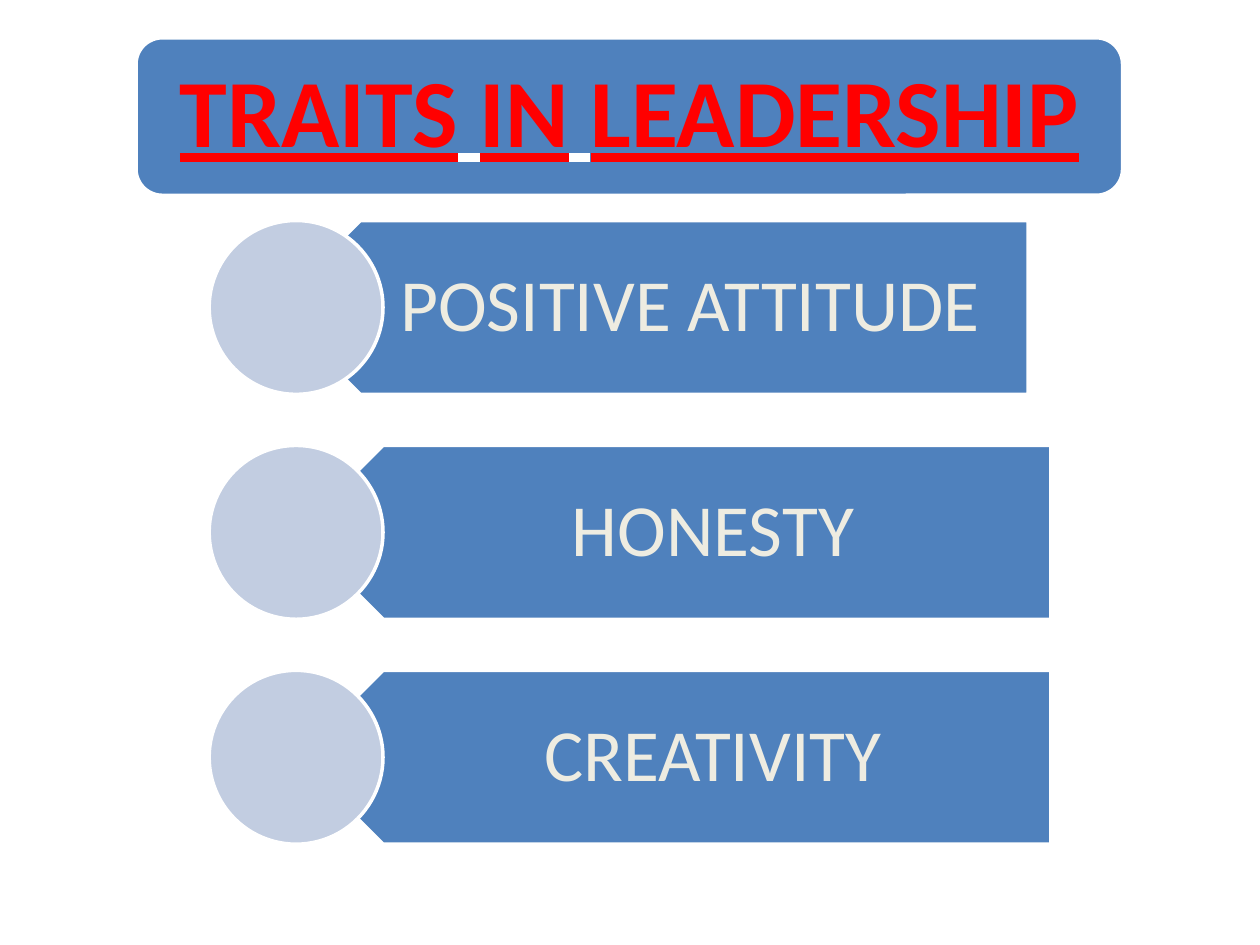
from dataclasses import dataclass

from pptx import Presentation
from pptx.dml.color import RGBColor as RGB
from pptx.enum.shapes import MSO_SHAPE as SHAPE
from pptx.enum.text import MSO_ANCHOR as ANCHOR, MSO_AUTO_SIZE as FIT, PP_ALIGN as ALIGN
from pptx.util import Inches, Pt


@dataclass(frozen=True)
class Theme:
    font: str = "Calibri"
    blue: str = "4F81BD"
    pale: str = "C2CDE1"
    cream: str = "EEECE1"
    white: str = "FFFFFF"
    red: str = "FF0000"
    head: int = 55
    body: int = 42
    edge: int = 2


LOOK = Theme()
WIDE, HIGH = 10, 7.5

# Grid of trait rows: first top, step between rows, row height
TOP, STEP, ROW = 1.75, 1.785, 1.38
DISC = 1.66   # left edge of the discs
BAR = 5.99    # length of a bar
TRAITS = [("POSITIVE ATTITUDE", 2.17), ("HONESTY", 2.35), ("CREATIVITY", 2.35)]


def draw(slide, kind, box, fill, turn=0):
    """Add a filled preset shape with a white edge."""
    shape = slide.shapes.add_shape(kind, *map(Inches, box))
    shape.shadow.inherit = False
    shape.fill.solid()
    shape.fill.fore_color.rgb = RGB.from_string(fill)
    shape.line.color.rgb = RGB.from_string(LOOK.white)
    shape.line.width = Pt(LOOK.edge)
    shape.rotation = turn
    return shape


def write(shape, runs, size, pad, **style):
    """Fill a shape with one centred line of (text, colour) runs."""
    frame = shape.text_frame
    frame.auto_size = FIT.NONE
    frame.word_wrap = True
    frame.vertical_anchor = ANCHOR.MIDDLE
    (frame.margin_left, frame.margin_top,
     frame.margin_right, frame.margin_bottom) = map(Inches, pad)
    para = frame.paragraphs[0]
    para.alignment = ALIGN.CENTER
    para.line_spacing = 0.9
    for text, color in runs:
        run = para.add_run()
        run.text = text
        font = run.font
        font.name, font.size = LOOK.font, Pt(size)
        font.color.rgb = RGB.from_string(color)
        for key, value in style.items():
            setattr(font, key, value)


def banner(slide):
    """Place the title on its rounded panel."""
    left, top, width, height = 1.08, 0.3, 7.83, 1.25
    draw(slide, SHAPE.ROUNDED_RECTANGLE, (left, top, width, height), LOOK.blue)
    title = slide.shapes.title
    slide.shapes._spTree.append(title._element)  # bring in front of the panel
    gap = 0.06
    title.left, title.top = Inches(left + gap), Inches(top + gap)
    title.width, title.height = Inches(width - 2 * gap), Inches(height - 2 * gap)
    runs = [("TRAITS", LOOK.red), (" ", LOOK.white), ("IN", LOOK.red),
            (" ", LOOK.white), ("LEADERSHIP", LOOK.red)]
    write(title, runs, LOOK.head, (0.23, 0.11, 0.23, 0.11), bold=True, underline=True)


def trait(slide, row, text, left):
    """Add one bar pointing left, its label and its disc."""
    top = TOP + row * STEP
    draw(slide, SHAPE.PENTAGON, (left, top, BAR, ROW), LOOK.blue, turn=180)
    tip = ROW / 4
    box = (left + tip, top, BAR - tip, ROW)
    label = slide.shapes.add_textbox(*map(Inches, box))
    write(label, [(text, LOOK.cream)], LOOK.body, (0.61, 0.17, 0.33, 0.17))
    draw(slide, SHAPE.OVAL, (DISC, top, ROW, ROW), LOOK.pale)


def main():
    deck = Presentation()
    deck.slide_width, deck.slide_height = Inches(WIDE), Inches(HIGH)
    slide = deck.slides.add_slide(deck.slide_layouts[5])  # title only
    banner(slide)
    for row, (text, left) in enumerate(TRAITS):
        trait(slide, row, text, left)
    deck.save("out.pptx")


if __name__ == "__main__":
    main()
